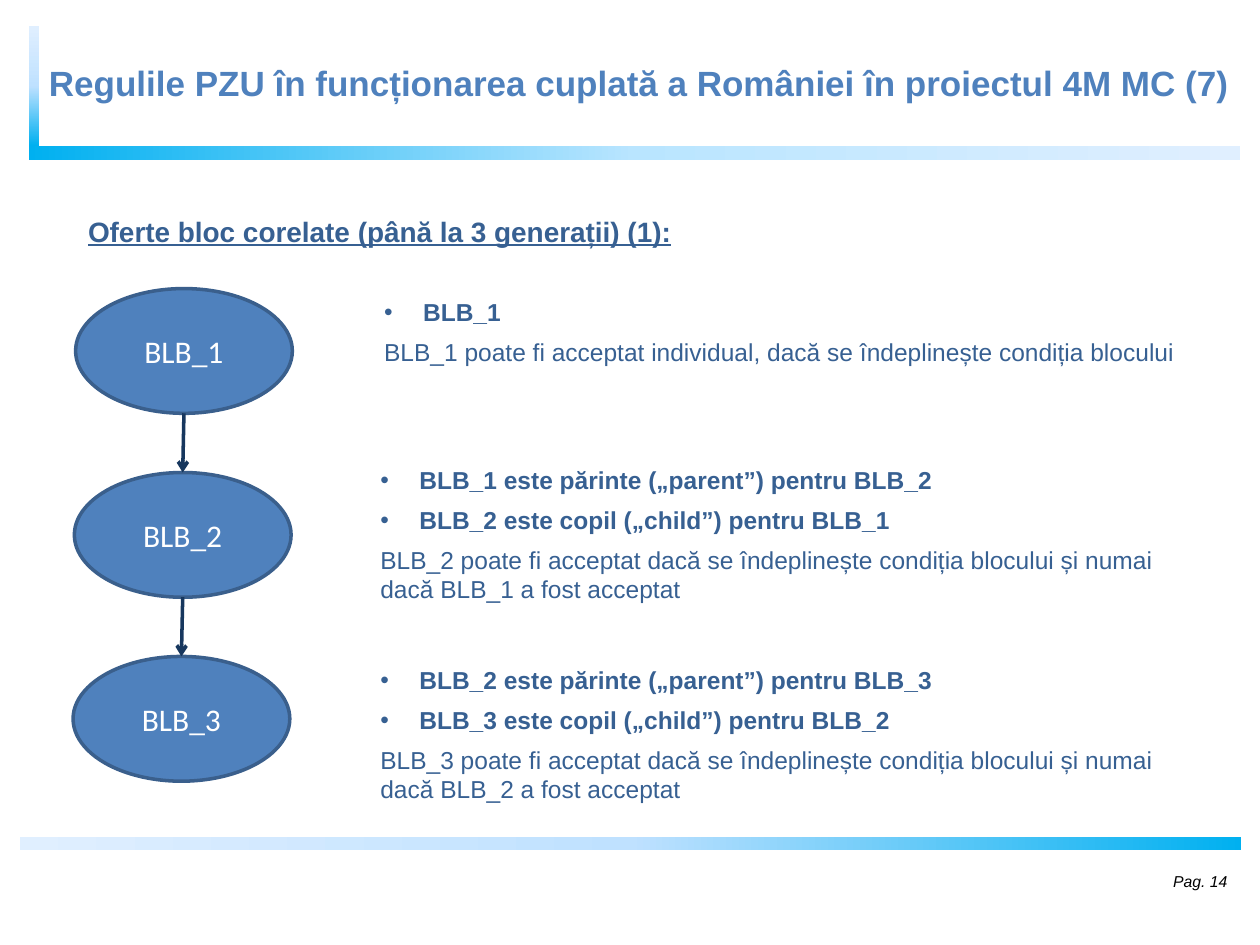
from copy import deepcopy

from pptx import Presentation
from pptx.dml.color import RGBColor
from pptx.enum.dml import MSO_LINE
from pptx.enum.shapes import MSO_CONNECTOR, MSO_SHAPE
from pptx.enum.text import MSO_ANCHOR, PP_ALIGN
from pptx.oxml.ns import qn
from pptx.oxml.xmlchemy import OxmlElement
from pptx.util import Inches, Pt

BLACK = RGBColor(0x00, 0x00, 0x00)
WHITE = RGBColor(0xFF, 0xFF, 0xFF)
BLUE = RGBColor(0x4F, 0x81, 0xBD)
EDGE = RGBColor(0x3A, 0x5F, 0x8C)
NAVY = RGBColor(0x17, 0x37, 0x5E)
INK = RGBColor(0x37, 0x60, 0x92)
CYAN = RGBColor(0x00, 0xB0, 0xF0)
SKY = RGBColor(0xB9, 0xE5, 0xFF)
ICE = RGBColor(0xBF, 0xE1, 0xFF)
PALE = RGBColor(0xE0, 0xEF, 0xFF)
COLS, ROWS = 100, 75


class Board:
    """Draws styled elements on one slide, placed by grid columns and rows."""

    def __init__(self, deck):
        self.slide = deck.slides.add_slide(deck.slide_layouts[6])
        self.shapes = self.slide.shapes
        self.cell = deck.slide_width / COLS, deck.slide_height / ROWS
        self.face = "Arial"

    def grid(self, *marks):
        return [round(m * self.cell[i % 2]) for i, m in enumerate(marks)]

    def font(self, par, size, color, face=None, **looks):
        for run in par.runs:
            run.font.name = face or self.face
            run.font.size = Pt(size)
            run.font.color.rgb = color
            for name, value in looks.items():
                setattr(run.font, name, value)

    def band(self, box, tones, turn=0):
        bar = self.shapes.add_shape(MSO_SHAPE.RECTANGLE, *self.grid(*box))
        bar.shadow.inherit = False
        bar.line.fill.background()
        bar.rotation = turn
        bar.fill.gradient()
        bar.fill.gradient_angle = 0
        stops = bar._element.spPr.find(qn("a:gradFill")).find(qn("a:gsLst"))
        stops.append(deepcopy(stops[0]))
        for i, (stop, tone) in enumerate(zip(bar.fill.gradient_stops, tones)):
            stop.position = i / 2
            stop.color.rgb = tone

    def frame(self, box):
        frame = self.shapes.add_textbox(*self.grid(*box)).text_frame
        frame.word_wrap = True
        return frame

    def label(self, box, text, size, color, align=PP_ALIGN.LEFT,
              anchor=MSO_ANCHOR.TOP, **looks):
        frame = self.frame(box)
        frame.text = text
        frame.vertical_anchor = anchor
        par = frame.paragraphs[0]
        par.alignment = align
        self.font(par, size, color, **looks)

    def bullet(self, par):
        props = par._p.get_or_add_pPr()
        props.set("marL", str(Inches(0.31)))
        props.set("indent", str(-Inches(0.31)))
        face = OxmlElement("a:buFont")
        face.set("typeface", self.face)
        mark = OxmlElement("a:buChar")
        mark.set("char", "•")
        props.extend([face, mark])

    def notes(self, box, heads, body):
        frame = self.frame(box)
        for i, text in enumerate([*heads, body]):
            par = frame.add_paragraph() if i else frame.paragraphs[0]
            par.text = text
            if i:
                par.space_before = Pt(6)
            if i < len(heads):
                self.bullet(par)
            self.font(par, 14, INK, bold=i < len(heads))

    def oval(self, box, text):
        node = self.shapes.add_shape(MSO_SHAPE.OVAL, *self.grid(*box))
        node.shadow.inherit = False
        node.fill.solid()
        node.fill.fore_color.rgb = BLUE
        node.line.color.rgb = EDGE
        node.line.width = Pt(2)
        frame = node.text_frame
        frame.text = text
        frame.vertical_anchor = MSO_ANCHOR.MIDDLE
        frame.paragraphs[0].alignment = PP_ALIGN.CENTER
        self.font(frame.paragraphs[0], 18, WHITE, "Calibri")
        return node

    def arrow(self, top, low):
        link = self.shapes.add_connector(
            MSO_CONNECTOR.STRAIGHT,
            top.left + top.width // 2, top.top + top.height,
            low.left + low.width // 2, low.top)
        link.end_connect(low, 0)
        link.line.color.rgb = NAVY
        link.line.width = Pt(2)
        link.line.dash_style = MSO_LINE.SOLID
        tip = OxmlElement("a:tailEnd")
        tip.set("type", "arrow")
        link.line._get_or_add_ln().append(tip)
        link._element.spPr.append(OxmlElement("a:effectLst"))


def main():
    deck = Presentation()
    deck.slide_width, deck.slide_height = Inches(10), Inches(7.5)
    board = Board(deck)

    board.band((2.3, 11.6, 96.1, 1.1), (CYAN, SKY, PALE))
    board.band((-2.05, 6.4, 9.5, 0.8), (CYAN, ICE, PALE), 270)
    board.band((1.6, 66.4, 96.9, 1.1), (PALE, ICE, CYAN))
    board.label((2.9, 4.4, 96.7, 5.4),
                "Regulile PZU în funcționarea cuplată a României în proiectul 4M MC (7)",
                20, BLUE, bold=True)
    board.label((6, 16.5, 92.9, 3.7),
                "Oferte bloc corelate (până la 3 generații) (1):",
                16, INK, bold=True, underline=True)
    board.label((87.5, 67.9, 10.9, 4), "Pag. 14", 9, BLACK,
                PP_ALIGN.RIGHT, MSO_ANCHOR.MIDDLE, italic=True)

    nodes = [board.oval((6 - 0.1 * i, 22.9 + 14.6 * i, 17.2, 9.9), f"BLB_{i + 1}")
             for i in range(3)]
    for top, low in zip(nodes, nodes[1:]):
        board.arrow(top, low)

    board.notes((29.5, 23.1, 65.4, 6.6), ["BLB_1"],
                "BLB_1 poate fi acceptat individual, dacă se îndeplinește condiția blocului")
    for row, old, new in ((36.4, "BLB_1", "BLB_2"), (52.3, "BLB_2", "BLB_3")):
        board.notes((29.2, row, 65.7, 12.1),
                    [f"{old} este părinte („parent”) pentru {new}",
                     f"{new} este copil („child”) pentru {old}"],
                    f"{new} poate fi acceptat dacă se îndeplinește condiția blocului "
                    f"și numai dacă {old} a fost acceptat")

    deck.save("out.pptx")


if __name__ == "__main__":
    main()
